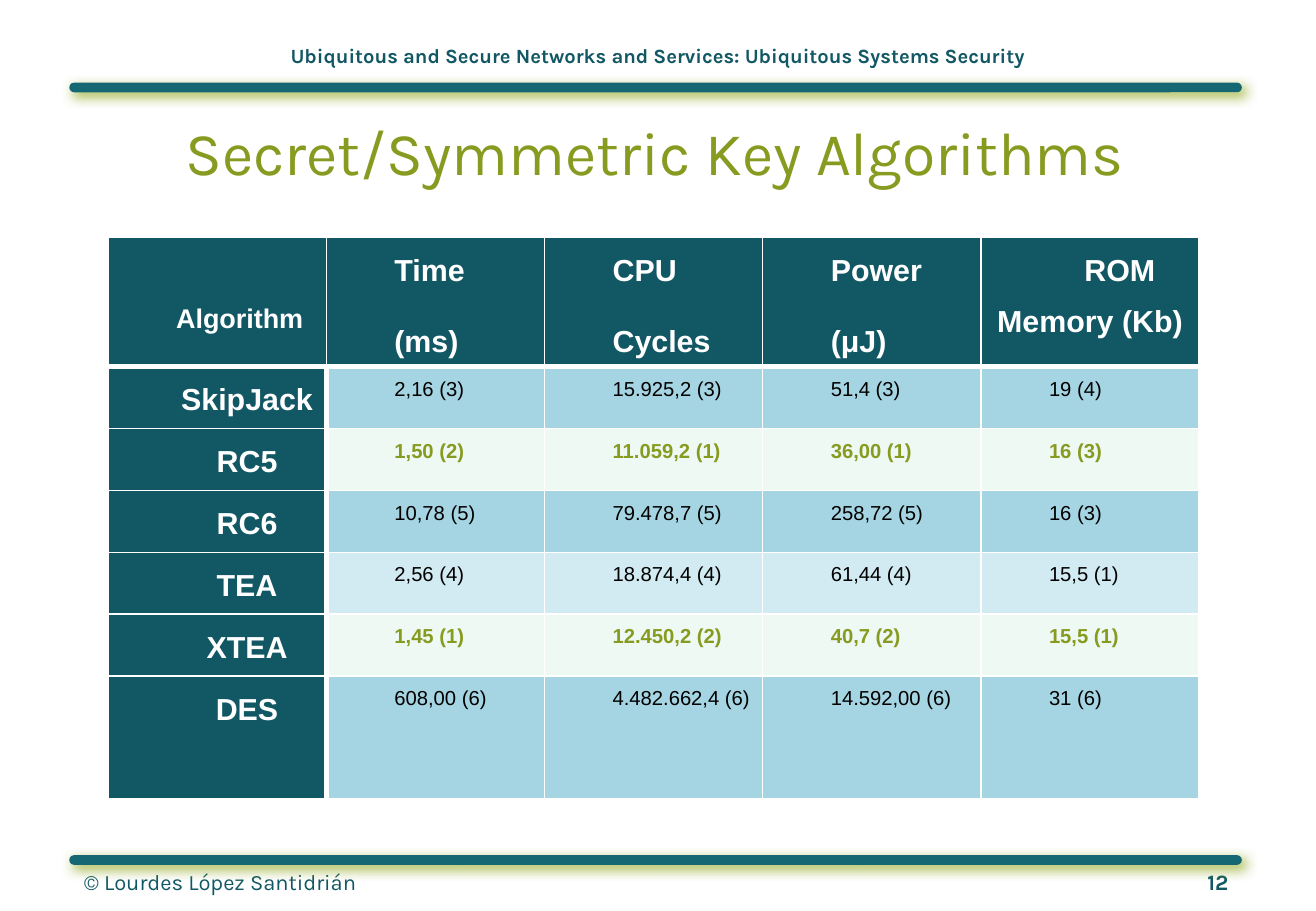
"""Build the slide comparing secret-key algorithms by time, cycles, power and memory."""
from dataclasses import dataclass

from lxml.etree import SubElement
from pptx import Presentation
from pptx.dml.color import RGBColor
from pptx.enum.shapes import MSO_SHAPE
from pptx.enum.text import MSO_ANCHOR, PP_ALIGN
from pptx.oxml.ns import qn
from pptx.slide import Slide
from pptx.table import _Cell
from pptx.text.text import TextFrame, _Run
from pptx.util import Inches, Pt

TEAL = RGBColor(0x12, 0x58, 0x64)
BAR_TEAL = RGBColor(0x15, 0x67, 0x74)
OLIVE = RGBColor(0x87, 0x9B, 0x21)
SHADOW_GREEN = RGBColor(0x95, 0xAA, 0x24)
SKY = RGBColor(0xA5, 0xD5, 0xE2)
PALE_SKY = RGBColor(0xD2, 0xEA, 0xF1)
MINT = RGBColor(0xEE, 0xF9, 0xF4)
WHITE = RGBColor(0xFF, 0xFF, 0xFF)
BLACK = RGBColor(0x00, 0x00, 0x00)

HEADINGS = ["Algorithm", "Time\n(ms)", "CPU\nCycles", "Power\n(μJ)", "ROM Memory (Kb)"]
ROW_HEIGHTS = [1.01] + [0.51] * 5 + [1.01]


@dataclass
class Algorithm:
    """One body row: its name, its ranked measures and its look."""
    name: str
    measures: list[str]
    fill: RGBColor = SKY
    best: bool = False


@dataclass
class CellStyle:
    """Fill and text format of a table cell."""
    fill: RGBColor
    color: RGBColor
    size: float
    bold: bool
    alignment: PP_ALIGN


ALGORITHMS = [
    Algorithm("SkipJack", ["2,16 (3)", "15.925,2 (3)", "51,4 (3)", "19 (4)"]),
    Algorithm("RC5", ["1,50 (2)", "11.059,2 (1)", "36,00 (1)", "16 (3)"], MINT, True),
    Algorithm("RC6", ["10,78 (5)", "79.478,7 (5)", "258,72 (5)", "16 (3)"]),
    Algorithm("TEA", ["2,56 (4)", "18.874,4 (4)", "61,44 (4)", "15,5 (1)"], PALE_SKY),
    Algorithm("XTEA", ["1,45 (1)", "12.450,2 (2)", "40,7 (2)", "15,5 (1)"], MINT, True),
    Algorithm("DES", ["608,00 (6)", "4.482.662,4 (6)", "14.592,00 (6)", "31 (6)"]),
]


def format_run(run: _Run, font: str, size: float, color: RGBColor, bold: bool = False) -> None:
    """Set the font of a run."""
    run.font.name = font
    run.font.size = Pt(size)
    run.font.color.rgb = color
    run.font.bold = bold


def set_margins(text_frame: TextFrame, horizontal: float, vertical: float) -> None:
    """Set the inner margins of a text frame."""
    text_frame.margin_left = text_frame.margin_right = Inches(horizontal)
    text_frame.margin_top = text_frame.margin_bottom = Inches(vertical)


def add_bar(slide: Slide, top: float) -> None:
    """Add a rounded rule with a soft green shadow."""
    bar = slide.shapes.add_shape(
        MSO_SHAPE.ROUNDED_RECTANGLE, Inches(0.57), Inches(top), Inches(9.65), Inches(0.08))
    bar.adjustments[0] = 0.5
    bar.fill.solid()
    bar.fill.fore_color.rgb = BAR_TEAL
    bar.line.fill.background()
    bar.shadow.inherit = False
    effects = bar.element.spPr.find(qn("a:effectLst"))
    shadow = SubElement(effects, qn("a:outerShdw"), blurRad=str(Pt(7)), dist=str(Pt(3)),
                        dir="2700000", algn="ctr", rotWithShape="0")
    color = SubElement(shadow, qn("a:srgbClr"), val=str(SHADOW_GREEN))
    SubElement(color, qn("a:alpha"), val="90000")


def add_header(slide: Slide) -> None:
    """Add the course name above the upper bar."""
    box = slide.shapes.add_textbox(Inches(1.64), Inches(0.36), Inches(7.55), Inches(0.2))
    text_frame = box.text_frame
    text_frame.word_wrap = True
    text_frame.vertical_anchor = MSO_ANCHOR.BOTTOM
    set_margins(text_frame, 0, 0)
    text_frame.text = "Ubiquitous and Secure Networks and Services: Ubiquitous Systems Security"
    paragraph = text_frame.paragraphs[0]
    paragraph.alignment = PP_ALIGN.CENTER
    format_run(paragraph.runs[0], "Karla", 12, TEAL, True)


def add_footer(slide: Slide) -> None:
    """Add the copyright line and the right-tabbed page number."""
    box = slide.shapes.add_textbox(Inches(0.61), Inches(7.11), Inches(9.6), Inches(0.3))
    text_frame = box.text_frame
    text_frame.word_wrap = True
    set_margins(text_frame, 0.08, 0.04)
    paragraph = text_frame.paragraphs[0]
    paragraph.text = "© Lourdes López Santidrián\t"
    tabs = SubElement(paragraph._p.get_or_add_pPr(), qn("a:tabLst"))
    SubElement(tabs, qn("a:tab"), pos=str(Inches(9.42)), algn="r")
    format_run(paragraph.runs[0], "Karla", 13, TEAL)
    page_number = paragraph.add_run()
    page_number.text = "12"
    format_run(page_number, "Karla", 13, TEAL, True)


def format_title(slide: Slide) -> None:
    """Place and format the title placeholder."""
    title = slide.shapes.title
    title.left, title.top = Inches(0.52), Inches(0.85)
    title.width, title.height = Inches(9.74), Inches(0.79)
    title.text_frame.text = "Secret/Symmetric Key Algorithms"
    title.text_frame.vertical_anchor = MSO_ANCHOR.MIDDLE
    paragraph = title.text_frame.paragraphs[0]
    paragraph.alignment = PP_ALIGN.CENTER
    format_run(paragraph.runs[0], "Karla", 36, OLIVE)


def set_borders(cell: _Cell, row: int, column: int) -> None:
    """Draw white borders, thicker beside the heading row and the name column."""
    thick = {"L": row > 0 and column == 1, "R": row > 0 and column == 0,
             "T": row == 1, "B": row == 0}
    properties = cell._tc.get_or_add_tcPr()
    for side, is_thick in thick.items():
        line = SubElement(properties, qn(f"a:ln{side}"), w=str(Pt(3 if is_thick else 1)))
        fill = SubElement(line, qn("a:solidFill"))
        SubElement(fill, qn("a:srgbClr"), val=str(WHITE))


def fill_cell(cell: _Cell, text: str, style: CellStyle) -> None:
    """Write and format the text of a cell."""
    cell.fill.solid()
    cell.fill.fore_color.rgb = style.fill
    cell.margin_left = cell.margin_right = Inches(0.07)
    cell.margin_top = cell.margin_bottom = 0
    cell.text_frame.text = text
    for paragraph in cell.text_frame.paragraphs:
        properties = paragraph._p.get_or_add_pPr()
        properties.set("marL", "0")
        properties.set("indent", str(Inches(0.49)))
        paragraph.alignment = style.alignment
        paragraph.line_spacing = 1.5
        paragraph.space_after = Pt(12)
        format_run(paragraph.runs[0], "Arial", style.size, style.color, style.bold)


def add_algorithm_table(slide: Slide) -> None:
    """Add the table of algorithms and their measures."""
    table = slide.shapes.add_table(
        len(ROW_HEIGHTS), len(HEADINGS),
        Inches(0.89), Inches(1.95), Inches(8.98), Inches(sum(ROW_HEIGHTS))).table
    table.horz_banding = False
    for row, height in zip(table.rows, ROW_HEIGHTS):
        row.height = Inches(height)
    heading = CellStyle(TEAL, WHITE, 18, True, PP_ALIGN.JUSTIFY)
    corner = CellStyle(TEAL, WHITE, 16, True, PP_ALIGN.LEFT)
    name = CellStyle(TEAL, WHITE, 18, True, PP_ALIGN.CENTER)
    contents = [list(zip(HEADINGS, [corner, heading, heading, heading, name]))]
    for algorithm in ALGORITHMS:
        color = OLIVE if algorithm.best else BLACK
        measure = CellStyle(algorithm.fill, color, 12, algorithm.best, PP_ALIGN.JUSTIFY)
        contents.append([(algorithm.name, name)] + [(text, measure) for text in algorithm.measures])
    for row, entries in enumerate(contents):
        for column, (text, style) in enumerate(entries):
            cell = table.cell(row, column)
            set_borders(cell, row, column)
            fill_cell(cell, text, style)
    table.cell(0, 0).margin_top = Inches(0.43)


def main() -> None:
    """Build and save the presentation."""
    presentation = Presentation()
    presentation.slide_width, presentation.slide_height = Inches(10.83), Inches(7.5)
    slide = presentation.slides.add_slide(presentation.slide_layouts[5])
    add_footer(slide)
    add_header(slide)
    for top in (0.68, 7.04):
        add_bar(slide, top)
    format_title(slide)
    add_algorithm_table(slide)
    presentation.save("out.pptx")


if __name__ == "__main__":
    main()
